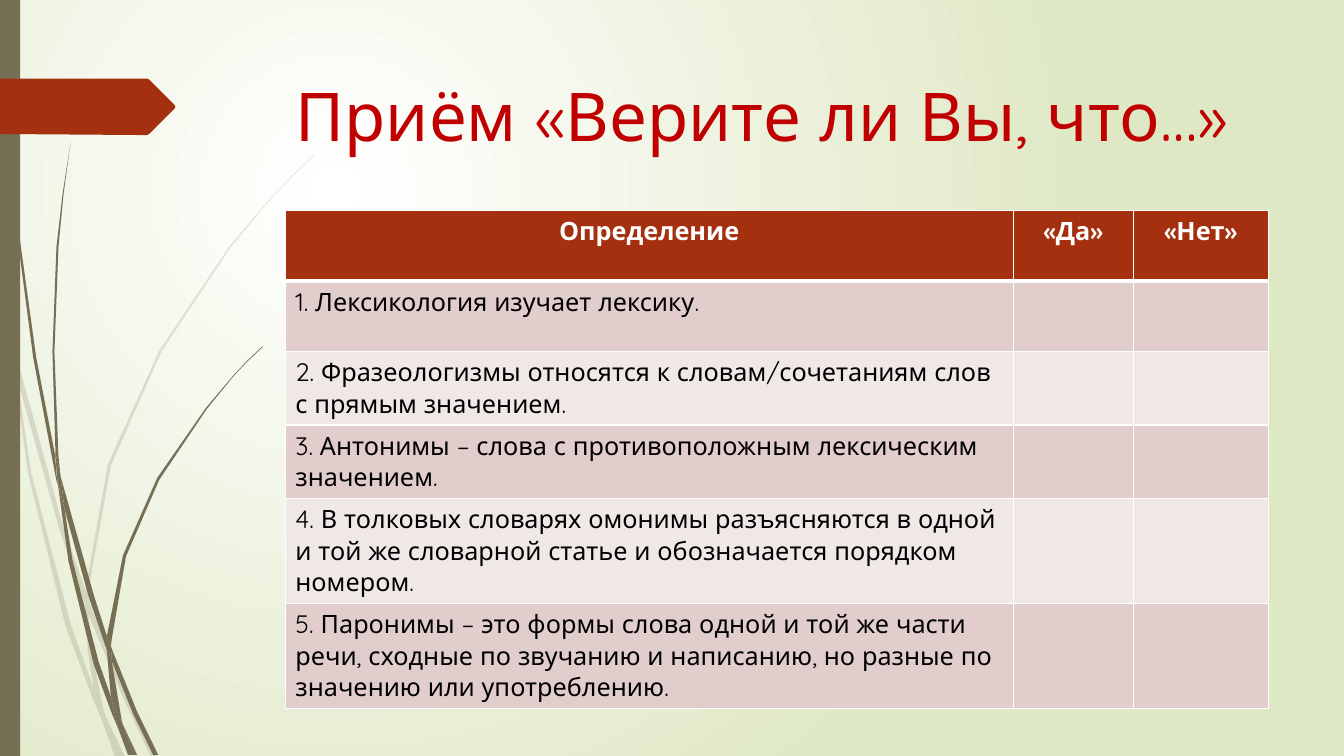
from lxml import etree
from pptx import Presentation
from pptx.dml.color import RGBColor
from pptx.enum.shapes import MSO_SHAPE
from pptx.enum.text import MSO_ANCHOR, MSO_AUTO_SIZE, PP_ALIGN
from pptx.oxml.ns import qn
from pptx.util import Inches, Pt

RECTANGLE = MSO_SHAPE.RECTANGLE
TOP = MSO_ANCHOR.TOP
NO_AUTOFIT = MSO_AUTO_SIZE.NONE
LEFT = PP_ALIGN.LEFT
CENTER = PP_ALIGN.CENTER

WHITE = RGBColor(0xFF, 0xFF, 0xFF)
BLACK = RGBColor(0x00, 0x00, 0x00)
PALE_GREEN = RGBColor(0xDF, 0xE8, 0xC4)
OLIVE = RGBColor(0x76, 0x6F, 0x54)
RUST = RGBColor(0xA5, 0x30, 0x10)
RED = RGBColor(0xC0, 0x00, 0x00)
PINK = RGBColor(0xE1, 0xCD, 0xCC)
LIGHT_PINK = RGBColor(0xF0, 0xE8, 0xE7)

LIGHT_GRASS = [
    [(0.11, 3.5), (0.09, 3.22), (0, 2.82), (0, 2.99), (0.1, 3.44)],
    [(0.58, 5.22), (0.84, 5.99), (0.85, 5.86), (0.62, 5.2), (0.14, 3.45),
     (0.17, 3.76)],
    [(0.92, 6.07), (0.88, 5.96), (0.88, 6.1), (1.23, 6.94), (1.5, 7.51),
     (1.55, 7.51), (1.27, 6.92)],
    [(1.19, 7.51), (1.24, 7.51), (1.05, 7.11)],
    [(0.93, 6.83), (0.7, 6.19), (0.31, 4.69), (0.17, 3.76), (0.11, 3.5),
     (0.28, 4.7), (0.65, 6.21), (0.92, 6.93), (1.01, 7.14), (0.99, 7.07)],
    [(0.84, 5.99), (0.87, 6.46), (0.93, 6.83), (0.96, 6.92), (1.05, 7.11),
     (1.03, 7.06), (0.91, 6.46), (0.88, 6.1), (0.88, 6.08)],
    [(0.88, 5.84), (1.1, 4.62), (1.6, 3.49), (2.29, 2.45), (2.68, 1.98),
     (2.9, 1.75), (3.12, 1.54), (3.12, 1.53), (2.89, 1.75), (2.68, 1.97),
     (2.28, 2.44), (1.58, 3.48), (1.07, 4.61), (0.85, 5.84), (0.85, 5.86),
     (0.88, 5.96)],
    [(1.01, 7.14), (1.14, 7.51), (1.19, 7.51)],
    [(0.88, 6.08), (0.88, 6.1), (0.88, 5.96), (0.85, 5.86), (0.84, 5.99)],
    [(0.96, 6.92), (0.93, 6.83), (0.99, 7.07), (1.01, 7.14), (1.19, 7.51),
     (1.05, 7.11)],
]
DARK_GRASS = [
    [(0.07, 1.1), (0.17, 2.33), (0.33, 3.55), (0.56, 4.77), (0.57, 4.81),
     (0.55, 4.57), (0.55, 4.53), (0.36, 3.55), (0.19, 2.32), (0.08, 1.09),
     (0.05, 0.48), (0.04, 0), (0.03, 0), (0.04, 0.48)],
    [(0.88, 5.92), (1.06, 6.45), (1.06, 6.33), (1.06, 6.31), (0.93, 5.9),
     (0.6, 4.72), (0.64, 5.05)],
    [(1.13, 6.49), (1.1, 6.41), (1.11, 6.56), (1.32, 7.08), (1.52, 7.49),
     (1.57, 7.49), (1.36, 7.06)],
    [(1.1, 6.91), (0.98, 6.57), (0.72, 5.56), (0.64, 5.05), (0.57, 4.77),
     (0.68, 5.57), (0.93, 6.59), (1.11, 7.08), (1.17, 7.22), (1.16, 7.17)],
    [(0.6, 4.72), (0.58, 4.53), (0.54, 3.49), (0.58, 2.45), (0.63, 1.93),
     (0.7, 1.41), (0.62, 1.93), (0.56, 2.45), (0.52, 3.49), (0.55, 4.49)],
    [(1.33, 7.49), (1.36, 7.49), (1.22, 7.19)],
    [(0.57, 4.77), (0.64, 5.05), (0.6, 4.72), (0.55, 4.49), (0.55, 4.53)],
    [(1.11, 6.33), (1.25, 5.52), (1.58, 4.76), (2.05, 4.06), (2.31, 3.74),
     (2.45, 3.59), (2.61, 3.44), (2.6, 3.44), (2.45, 3.58), (2.31, 3.73),
     (2.04, 4.05), (1.56, 4.74), (1.22, 5.51), (1.06, 6.31), (1.1, 6.41)],
    [(1.17, 7.22), (1.27, 7.49), (1.31, 7.49)],
    [(1.06, 6.45), (1.1, 6.91), (1.16, 7.06), (1.22, 7.19), (1.21, 7.16),
     (1.11, 6.56), (1.09, 6.51)],
    [(1.06, 6.45), (1.09, 6.51), (1.11, 6.56), (1.1, 6.41), (1.06, 6.31)],
    [(1.16, 7.06), (1.1, 6.91), (1.16, 7.17), (1.17, 7.22), (1.3, 7.49),
     (1.33, 7.49), (1.22, 7.19)],
]
ARROW_TAB = [(0, 0.78), (1.46, 0.78), (1.48, 0.79), (1.73, 1.04), (1.74, 1.06),
             (1.73, 1.08), (1.48, 1.33), (1.46, 1.34), (1.36, 1.34), (0, 1.33)]

COLUMN_WIDTHS = [7.22, 1.19, 1.34]
ROW_HEIGHT = 0.7
ROWS = [
    ["Определение", "«Да»", "«Нет»"],
    ["1. Лексикология изучает лексику.", "", ""],
    ["2. Фразеологизмы относятся к словам/сочетаниям слов с прямым значением.", "", ""],
    ["3. Антонимы – слова с противоположным лексическим значением.", "", ""],
    ["4. В толковых словарях омонимы разъясняются в одной и той же словарной "
     "статье и обозначается порядком номером.", "", ""],
    ["5. Паронимы – это формы слова одной и той же части речи, сходные по "
     "звучанию и написанию, но разные по значению или употреблению.", "", ""],
]


class SlideBuilder:
    font_name = "Quicksand"

    def __init__(self, presentation):
        self.slide = presentation.slides.add_slide(presentation.slide_layouts[5])

    def style_font(self, paragraph, size, color, bold=False):
        paragraph.font.name = self.font_name
        paragraph.font.size = Pt(size)
        paragraph.font.color.rgb = color
        paragraph.font.bold = bold

    def paint(self, shape, color, opacity=100):
        shape.shadow.inherit = False
        shape.fill.solid()
        shape.fill.fore_color.rgb = color
        shape.line.fill.background()
        if opacity < 100:
            color_node = next(shape.element.spPr.iter(qn("a:srgbClr")))
            etree.SubElement(color_node, qn("a:alpha"), val=str(opacity * 1000))

    def radial_background(self, inner, outer):
        fill = self.slide.background.fill
        fill.gradient()
        for stop, position, color in zip(fill.gradient_stops, (0, 1), (inner, outer)):
            stop.position = position
            stop.color.rgb = color
        gradient = next(self.slide.element.iter(qn("a:gradFill")))
        gradient.remove(gradient.find(qn("a:lin")))
        circle = etree.SubElement(gradient, qn("a:path"), path="circle")
        etree.SubElement(circle, qn("a:fillToRect"),
                         l="50000", t="50000", r="100000", b="100000")

    def outline(self, points, color, opacity=100):
        corners = [(Inches(x), Inches(y)) for x, y in points]
        builder = self.slide.shapes.build_freeform(*corners[0])
        builder.add_line_segments(corners[1:])
        self.paint(builder.convert_to_shape(), color, opacity)

    def rectangle(self, left, top, width, height, color):
        shape = self.slide.shapes.add_shape(
            RECTANGLE, Inches(left), Inches(top), Inches(width), Inches(height))
        self.paint(shape, color)

    def title(self, text, left, top, width, height):
        shape = self.slide.shapes.title
        shape.left, shape.top = Inches(left), Inches(top)
        shape.width, shape.height = Inches(width), Inches(height)
        frame = shape.text_frame
        frame.text = text
        frame.word_wrap = True
        frame.auto_size = NO_AUTOFIT
        frame.vertical_anchor = TOP
        frame.paragraphs[0].alignment = LEFT
        self.style_font(frame.paragraphs[0], 48, RED)

    def border(self, cell, side, width):
        line = etree.SubElement(cell._tc.get_or_add_tcPr(), qn(f"a:ln{side}"),
                                w=str(Pt(width)))
        fill = etree.SubElement(line, qn("a:solidFill"))
        etree.SubElement(fill, qn("a:srgbClr"), val=str(WHITE))

    def table(self, rows, left, top):
        table = self.slide.shapes.add_table(
            len(rows), len(COLUMN_WIDTHS), Inches(left), Inches(top),
            Inches(sum(COLUMN_WIDTHS)), Inches(ROW_HEIGHT * len(rows))).table
        for column, width in zip(table.columns, COLUMN_WIDTHS):
            column.width = Inches(width)
        for row_index, row in enumerate(rows):
            header = row_index == 0
            banded = PINK if row_index % 2 else LIGHT_PINK
            for column_index, text in enumerate(row):
                cell = table.cell(row_index, column_index)
                for side in "LRTB":
                    thick = (header and side == "B") or (row_index == 1 and side == "T")
                    self.border(cell, side, 3 if thick else 1)
                cell.fill.solid()
                cell.fill.fore_color.rgb = RUST if header else banded
                cell.text = text
                paragraph = cell.text_frame.paragraphs[0]
                paragraph.alignment = CENTER if header else LEFT
                self.style_font(paragraph, 18, WHITE if header else BLACK, header)


def main():
    presentation = Presentation()
    presentation.slide_width = Inches(13.33)
    presentation.slide_height = Inches(7.5)
    builder = SlideBuilder(presentation)
    builder.radial_background(WHITE, PALE_GREEN)
    for points in LIGHT_GRASS:
        builder.outline(points, OLIVE, opacity=20)
    for points in DARK_GRASS:
        builder.outline(points, OLIVE)
    builder.rectangle(0, 0, 0.2, 7.5, OLIVE)
    builder.outline(ARROW_TAB, RUST)
    builder.title("Приём «Верите ли Вы, что…»", 2.83, 0.69, 9.75, 1.4)
    builder.table(ROWS, 2.83, 2.09)
    presentation.save("out.pptx")


if __name__ == "__main__":
    main()
